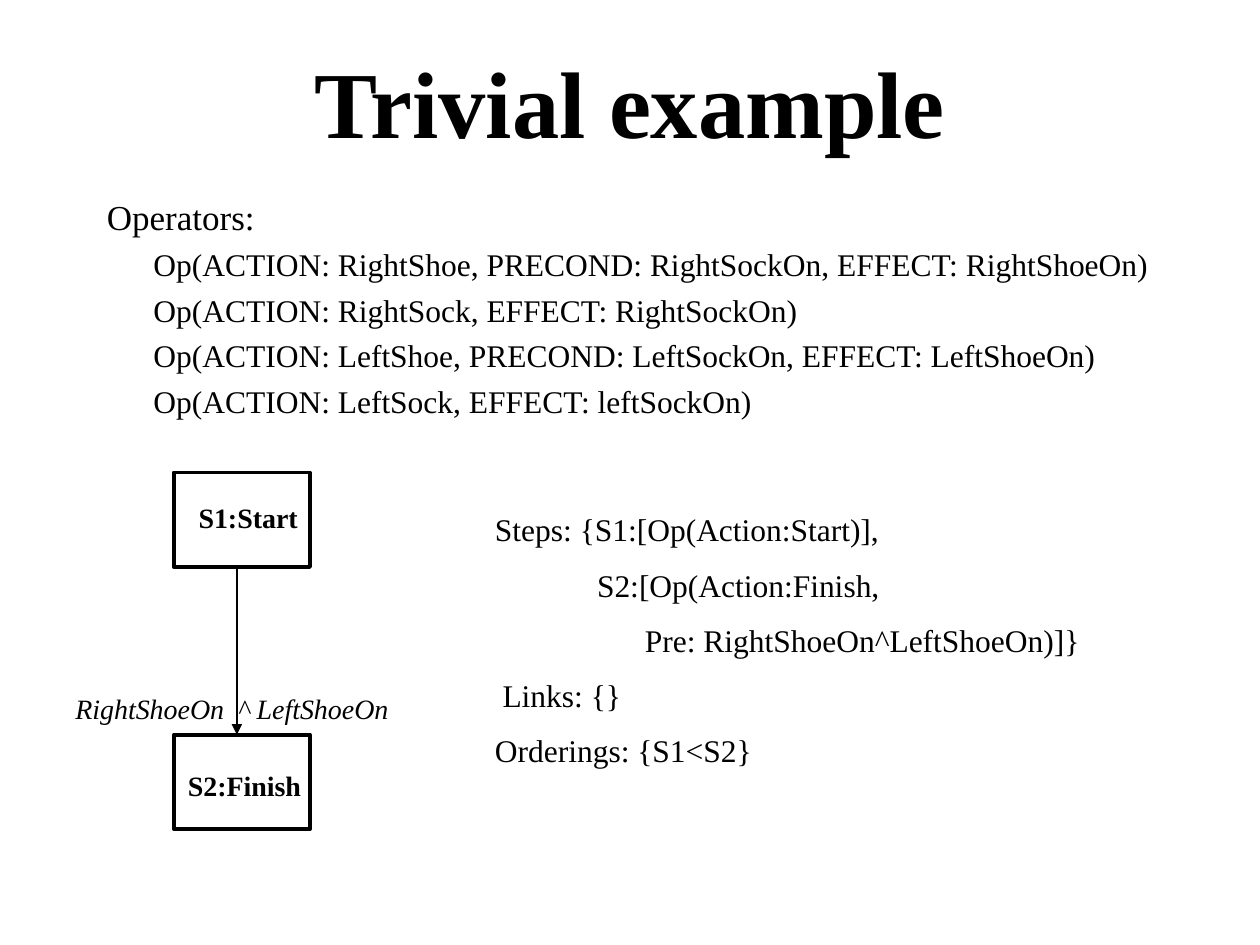
from pptx import Presentation
from pptx import util as u
from pptx.dml.color import RGBColor
from pptx.enum import shapes, text
from pptx.oxml.ns import qn
from lxml import etree

Inches, Pt = u.Inches, u.Pt
COLORS = {"ink": "000000"}
INK = RGBColor.from_string(COLORS["ink"])
LEFT, CENTER = text.PP_ALIGN.LEFT, text.PP_ALIGN.CENTER


def add_text(page, left, top, width, height, lines, gap=0, align=LEFT,
             bold=False, italic=False, anchor=text.MSO_ANCHOR.TOP, wrap=True, tab=None):
    box = page.shapes.add_textbox(Inches(left), Inches(top), Inches(width), Inches(height))
    frame = box.text_frame
    frame.word_wrap = wrap
    frame.vertical_anchor = anchor
    for index, (words, size, indent) in enumerate(lines):
        para = frame.paragraphs[0] if index == 0 else frame.add_paragraph()
        para.text = words
        para.alignment = align
        para.space_before = Pt(gap if index else 0)
        properties = para._p.get_or_add_pPr()
        if indent:
            properties.set("marL", str(Inches(indent)))
        if tab:
            stops = etree.SubElement(properties, qn("a:tabLst"))
            etree.SubElement(stops, qn("a:tab"), pos=str(Inches(tab)), algn="l")
        para.font.name = "Times New Roman"
        para.font.size = Pt(size)
        para.font.bold = bold
        para.font.italic = italic
        para.font.color.rgb = INK


deck = Presentation()
deck.slide_width, deck.slide_height = Inches(10), Inches(7.5)
page = deck.slides.add_slide(deck.slide_layouts[6])

add_text(page, 0.75, 0.17, 8.5, 1.25, [("Trivial example", 54, 0)],
         align=CENTER, bold=True, anchor=text.MSO_ANCHOR.MIDDLE)

operators = [
    "Op(ACTION: RightShoe, PRECOND: RightSockOn, EFFECT: RightShoeOn)",
    "Op(ACTION: RightSock, EFFECT: RightSockOn)",
    "Op(ACTION: LeftShoe, PRECOND: LeftSockOn, EFFECT: LeftShoeOn)",
    "Op(ACTION: LeftSock, EFFECT: leftSockOn)",
]
add_text(page, 0.75, 1.5, 8.5, 1.92,
         [("Operators:", 20, 0)] + [(operator, 18, 0.37) for operator in operators], gap=4.5)

steps = [
    ("S1:Start", 3.75, 1.47, 3.92, 1),
    ("S2:Finish", 5.83, 1.38, 6.05, 1.12),
]
for label, top, label_left, label_top, label_width in steps:
    step = page.shapes.add_shape(shapes.MSO_SHAPE.RECTANGLE,
                                 Inches(1.38), Inches(top), Inches(1.08), Inches(0.75))
    step.shadow.inherit = False
    step.fill.background()
    step.line.color.rgb = INK
    step.line.width = Pt(2.25)
    add_text(page, label_left, label_top, label_width, 0.37, [(label, 16, 0)],
             align=CENTER, bold=True, wrap=False)

add_text(page, 0.5, 5.44, 2.8, 0.37, [("RightShoeOn\t^ LeftShoeOn", 16, 0)],
         italic=True, tab=1.29)

arrow = page.shapes.add_connector(shapes.MSO_CONNECTOR.STRAIGHT,
                                  Inches(1.88), Inches(4.5), Inches(1.88), Inches(5.83))
arrow.line.color.rgb = INK
arrow.line.width = Pt(1)
etree.SubElement(arrow.line._get_or_add_ln(), qn("a:tailEnd"), type="triangle")
etree.SubElement(arrow._element.spPr, qn("a:effectLst"))

plan = [
    ("Steps: {S1:[Op(Action:Start)],", 18, 0),
    ("S2:[Op(Action:Finish,", 18, 0.81),
    ("Pre: RightShoeOn^LeftShoeOn)]}", 18, 1.19),
    ("Links: {}", 18, 0.06),
    ("Orderings: {S1<S2}", 18, 0),
]
add_text(page, 3.83, 4, 5.25, 2.21, plan, gap=10)

deck.save("out.pptx")
